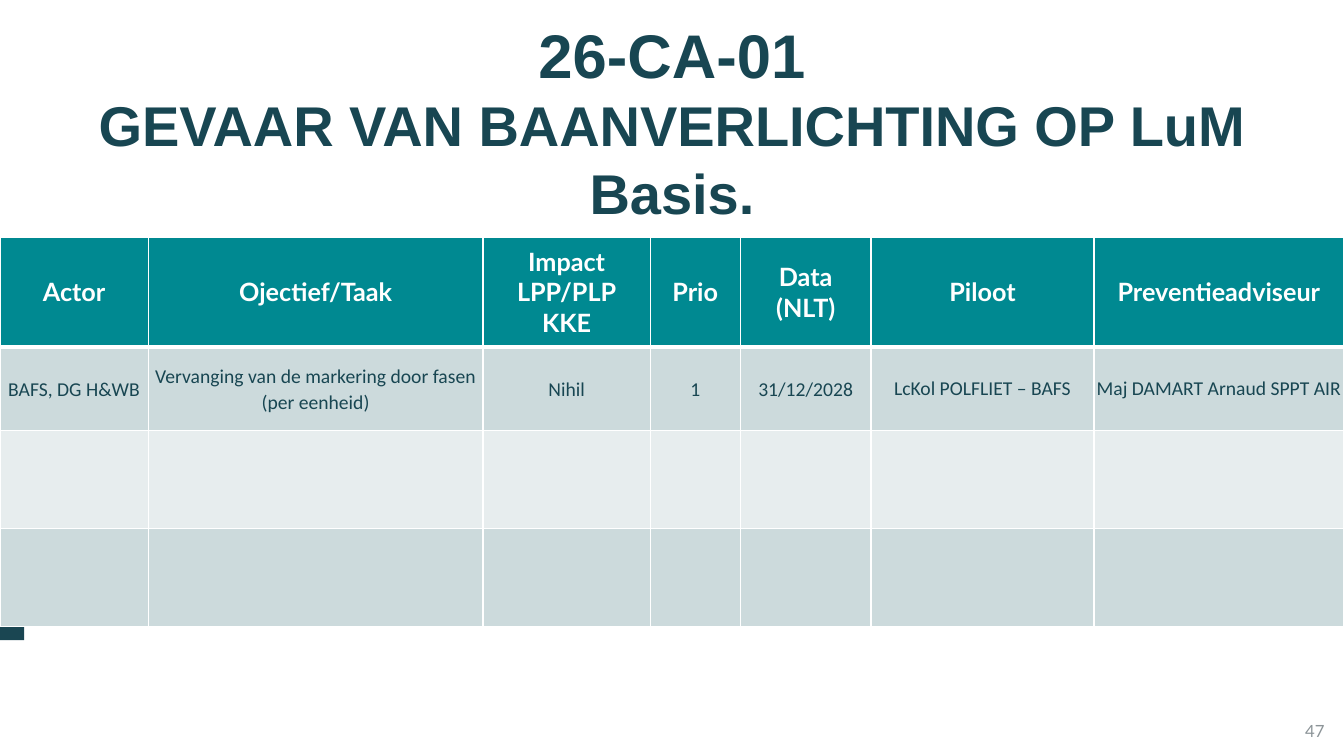
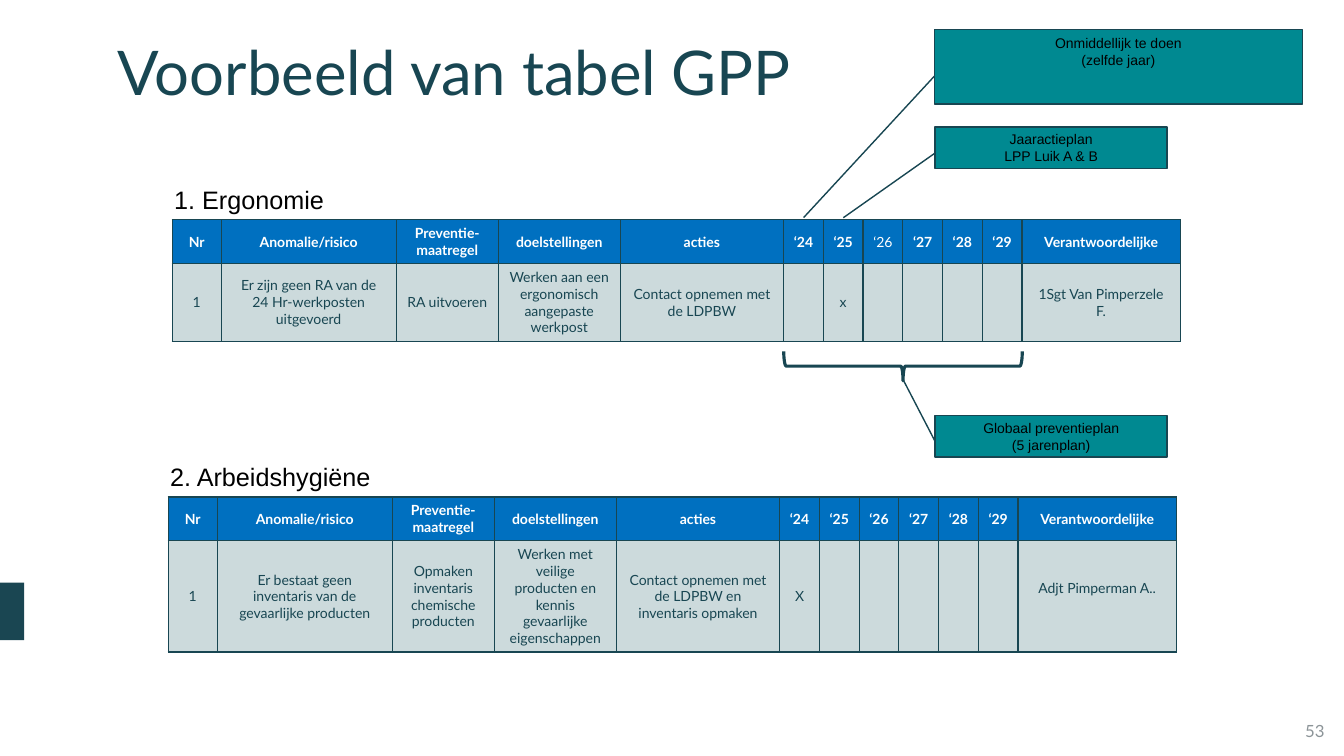
from dataclasses import dataclass
from lxml.etree import SubElement
from pptx import Presentation
from pptx.dml.color import RGBColor
from pptx.enum.shapes import MSO_SHAPE
from pptx.enum.text import MSO_ANCHOR, MSO_AUTO_SIZE, PP_ALIGN
from pptx.oxml.ns import qn
from pptx.util import Pt


@dataclass(frozen=True)
class Theme:
    sans: str = "Lato"
    plain: str = "Arial"
    body: str = "Calibri"
    ink: str = "184652"
    bar: str = "1A4652"
    teal: str = "008991"
    blue: str = "0070C0"
    mist: str = "CCDADC"
    pale: str = "E7EDEE"
    white: str = "FFFFFF"
    black: str = "000000"
    grey: str = "8C9498"
    title: int = 44
    second: int = 40
    head: int = 18
    cell: int = 14
    page: int = 12
    small: int = 10


T = Theme()
WIDE, HIGH = 960, 540
PLAN_COLS = [35, 125, 73, 87, 116.8] + [28.4] * 6 + [113]
PLAN_HEAD = ["Nr", "Anomalie/risico", "Preventie-maatregel", "doelstellingen", "acties",
             "‘24", "‘25", "‘26", "‘27", "‘28", "‘29", "Verantwoordelijke"]
FIRST_YEAR, YEARS = 5, 6


def pts(box):
    return [Pt(n) for n in box]


def paint(fill, color):
    fill.solid()
    fill.fore_color.rgb = RGBColor.from_string(color)


def style(frame, font, size, color, bold=False, align=PP_ALIGN.CENTER, space=None):
    for para in frame.paragraphs:
        para.alignment = align
        para.line_spacing = space
        for run in para.runs:
            run.font.name, run.font.size, run.font.bold = font, Pt(size), bold
            run.font.color.rgb = RGBColor.from_string(color)


def label(slide, text, box, font, size, color, align, anchor=MSO_ANCHOR.TOP):
    frame = slide.shapes.add_textbox(*pts(box)).text_frame
    frame.word_wrap = True
    frame.vertical_anchor = anchor
    frame.text = text
    style(frame, font, size, color, align=align)


def shape(slide, kind, box, fill=None, line=None, weight=1):
    item = slide.shapes.add_shape(kind, *pts(box))
    item.shadow.inherit = False
    if fill:
        paint(item.fill, fill)
    else:
        item.fill.background()
    if line:
        paint(item.line.fill, line)
        item.line.width = Pt(weight)
    else:
        item.line.fill.background()
    return item


def base(deck, number):
    """Add a slide with the side bar and the page number."""
    slide = deck.slides.add_slide(deck.slide_layouts[5])
    shape(slide, MSO_SHAPE.RECTANGLE, (0, 416.2, 17.3, 41), T.bar)
    label(slide, number, (737.3, 507.6, 216, 28.8), T.sans, T.page, T.grey,
          PP_ALIGN.RIGHT, MSO_ANCHOR.MIDDLE)
    return slide


def title(slide, text, box, font, bold, align, space):
    item = slide.shapes.title
    item.left, item.top, item.width, item.height = pts(box)
    frame = item.text_frame
    frame.text = text
    frame.auto_size = MSO_AUTO_SIZE.NONE
    frame.word_wrap = True
    frame.vertical_anchor = MSO_ANCHOR.TOP
    style(frame, font, T.title, T.ink, bold, align, space)
    return frame


def edge(cell, color, **widths):
    """Draw cell borders; widths are points by side: L, R, T, B."""
    props = cell._tc.get_or_add_tcPr()
    for spot, side in enumerate("LRTB"):
        line = SubElement(props, qn("a:ln" + side), w=str(Pt(widths.get(side, 1))))
        fill = SubElement(line, qn("a:solidFill"))
        SubElement(fill, qn("a:srgbClr"), val=color)
        props.insert(spot, line)


def grid(slide, spot, cols, rows, texts, fills, line, rule=1):
    """Add a table with one fill per row; rule is the width under the header."""
    box = (*spot, sum(cols), sum(rows))
    table = slide.shapes.add_table(len(rows), len(cols), *pts(box)).table
    for col, width in zip(table.columns, cols):
        col.width = Pt(width)
    for r, (row, height) in enumerate(zip(table.rows, rows)):
        row.height = Pt(height)
        for c, cell in enumerate(row.cells):
            cell.vertical_anchor = MSO_ANCHOR.MIDDLE
            paint(cell.fill, fills[r])
            edge(cell, line, T=rule if r == 1 else 1, B=rule if r == 0 else 1)
            if r < len(texts):
                cell.text = texts[r][c]
    return table


def inset(cell, side, top=0):
    cell.margin_left = cell.margin_right = Pt(side)
    cell.margin_top, cell.margin_bottom = Pt(top), Pt(0)


def tasks(slide, spot):
    texts = [
        ["Actor", "Ojectief/Taak", "Impact\nLPP/PLP\nKKE", "Prio", "Data\n(NLT)",
         "Piloot", "Preventieadviseur"],
        ["BAFS, DG H&WB", "Vervanging van de markering door fasen (per eenheid)", "Nihil",
         "1", "31/12/2028", "LcKol POLFLIET – BAFS", "Maj DAMART Arnaud SPPT AIR"],
    ]
    cols = [105.9, 239.2, 119.4, 64.4, 93.4, 159.2, 178.5]
    table = grid(slide, spot, cols, [78.4, 59.6, 70, 70], texts,
                 [T.teal, T.mist, T.pale, T.mist], T.white, rule=3)
    for c in range(len(cols)):
        style(table.cell(0, c).text_frame, T.sans, T.head, T.white, True)
        cell = table.cell(1, c)
        tight = c >= 5
        inset(cell, 0.7 if tight else 3.6, 0.7 if tight else 0)
        style(cell.text_frame, T.body, T.cell, T.ink, space=1 if tight else 1.07)


def plan(slide, spot, name, height, texts, light=()):
    """Add a heading and its plan table; light lists headers that are not bold."""
    x, y = spot
    label(slide, name, (x - 5.7, y - 29, 209.5, 28.8), T.plain, T.head, T.black,
          PP_ALIGN.LEFT)
    table = grid(slide, spot, PLAN_COLS, [31, height], [PLAN_HEAD, texts],
                 [T.blue, T.mist], T.ink)
    for c, head in enumerate(PLAN_HEAD):
        style(table.cell(0, c).text_frame, T.sans, T.small, T.white, head not in light)
        style(table.cell(1, c).text_frame, T.sans, T.small, T.ink)
    return table


def callout(slide, text, box, aim, anchor=MSO_ANCHOR.MIDDLE):
    """Add a boxed note whose line ends at the point aim."""
    x, y, w, h = box
    item = shape(slide, MSO_SHAPE.LINE_CALLOUT_1, box, T.teal, T.ink)
    ends = 0.63, 0, (aim[1] - y) / h, (aim[0] - x) / w
    for i, end in enumerate(ends):
        item.adjustments[i] = end
    frame = item.text_frame
    frame.word_wrap = True
    frame.margin_top = frame.margin_bottom = Pt(3.6)
    frame.vertical_anchor = anchor
    frame.text = text
    style(frame, T.plain, T.small, T.black)


def brace(slide, box):
    """Add a brace that opens upward and fills the box."""
    x, y, w, h = box
    turned = x + (w - h) / 2, y + (h - w) / 2, h, w
    item = shape(slide, MSO_SHAPE.RIGHT_BRACE, turned, line=T.ink, weight=2.25)
    item.rotation = 90


def action(deck):
    slide = base(deck, "47")
    frame = title(slide, "26-CA-01\vGEVAAR VAN BAANVERLICHTING OP LuM Basis.",
                  (0, 8.6, WIDE, 157.7), T.plain, True, PP_ALIGN.CENTER, 1)
    frame.paragraphs[0].runs[1].font.size = Pt(T.second)
    tasks(slide, (0, 169.5))


def sample(deck):
    slide = base(deck, "53")
    title(slide, "Voorbeeld van tabel GPP", (77, 26.6, 864, 90), T.sans, False,
          PP_ALIGN.LEFT, 0.9)
    x, y = 123, 157
    plan(slide, (x, y), "1. Ergonomie", 55.4,
         ["1", "Er zijn geen RA van de 24 Hr-werkposten uitgevoerd", "RA uitvoeren",
          "Werken aan een ergonomisch aangepaste werkpost", "Contact opnemen met de LDPBW",
          "", "x", "", "", "", "", "1Sgt Van Pimperzele F."], light=["‘26"])
    lower = plan(slide, (120.2, 355), "2. Arbeidshygiëne", 79.5,
                 ["1", "Er bestaat geen inventaris van de gevaarlijke producten",
                  "Opmaken inventaris chemische producten",
                  "Werken met veilige producten en kennis gevaarlijke eigenschappen",
                  "Contact opnemen met de LDPBW en inventaris opmaken",
                  "X", "", "", "", "", "", "Adjt Pimperman A.."])
    lower.cell(1, len(PLAN_COLS) - 1).margin_bottom = Pt(15.6)

    left = x + sum(PLAN_COLS[:FIRST_YEAR])
    year = PLAN_COLS[FIRST_YEAR]
    span = year * YEARS
    brace(slide, (left, 251, span, 21))
    callout(slide, "Jaaractieplan\nLPP Luik A & B", (668, 90.7, 165.6, 29.5),
            (left + year * 1.5, y - 1.5))
    callout(slide, "Onmiddellijk te doen\n(zelfde jaar)", (667.4, 20.9, 262.8, 53.3),
            (left + year / 2, y - 1.5), MSO_ANCHOR.TOP)
    callout(slide, "Globaal preventieplan\n(5 jarenplan)", (668, 296.8, 165.6, 29.5),
            (left + span / 2, 271))


def main():
    deck = Presentation()
    deck.slide_width, deck.slide_height = Pt(WIDE), Pt(HIGH)
    action(deck)
    sample(deck)
    deck.save("out.pptx")


if __name__ == "__main__":
    main()
